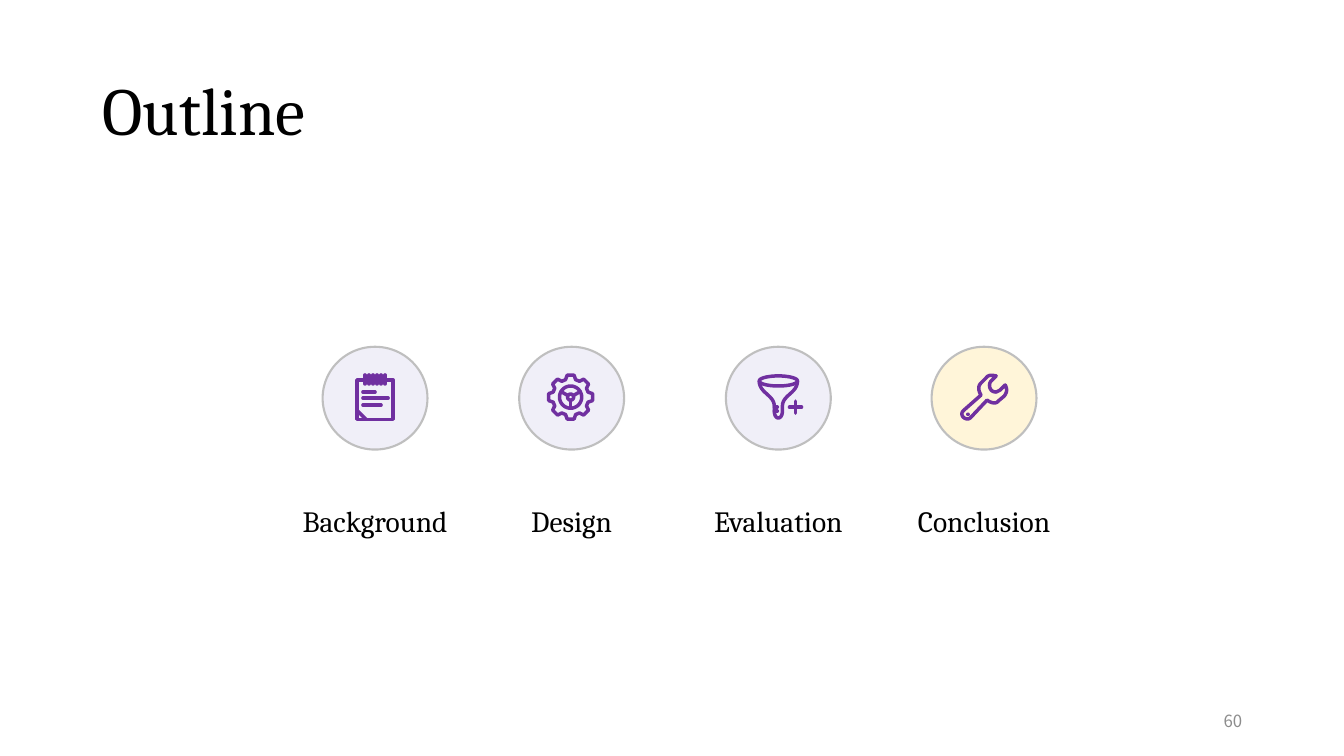
from dataclasses import dataclass, field
from math import cos, radians, sin

from lxml import etree
from pptx import Presentation
from pptx import util as u
from pptx.dml.color import RGBColor
from pptx.enum import shapes, text
from pptx.oxml import ns


@dataclass
class Theme:
    px: int = 9144
    ink: str = "000000"
    icon: str = "7030A0"
    rim: str = "BFBFBF"
    lilac: str = "9E98D5"
    amber: str = "FFC000"
    tint: int = 15
    rim_width: float = 1.5
    icon_width: float = 2.5
    title: dict = field(default_factory=lambda: {"name": "Cambria", "size": u.Pt(48)})
    label: dict = field(default_factory=lambda: {"name": "Cambria", "size": u.Pt(21)})
    number: dict = field(default_factory=lambda: {"name": "Noto Sans CJK SC", "size": u.Pt(12)})
    muted: str = "8C8C8C"


def bezier(start, controls):
    points = [start, *zip(controls[::2], controls[1::2])]
    for step in range(1, 13):
        t = step / 12
        weights = ((1 - t) ** 3, 3 * t * (1 - t) ** 2, 3 * t * t * (1 - t), t ** 3)
        yield tuple(sum(w * p[axis] for w, p in zip(weights, points)) for axis in (0, 1))


def trace(start, *steps):
    points = [start]
    for step in steps:
        points += [step] if len(step) == 2 else bezier(points[-1], step)
    return points


def polar(cx, cy, radius, angle):
    return cx + radius * cos(radians(angle)), cy + radius * sin(radians(angle))


def oval(cx, cy, rx, ry):
    return [(cx + rx * cos(radians(a)), cy + ry * sin(radians(a))) for a in range(0, 361, 10)]


def notepad():
    frame = [(-18, -17), (18, -17), (18, 22), (-18, 22), (-18, -17)]
    fold = [(-18, 13), (-9, 22)]
    rings = [[(x, -22), (x, -13)] for x in range(-10, 11, 4)]
    lines = [[(-12, y), (end, y)] for y, end in ((-5, 0), (1, 13), (8, 6))]
    return [frame, fold, *rings, *lines]


def gear():
    cx, cy = -1, 0
    rim = [polar(cx, cy, radius, tooth + turn)
           for tooth in range(0, 360, 45)
           for radius, turn in ((18, -16), (22, -9), (22, 9), (18, 16))]
    spokes = [[polar(cx, cy, r, angle) for r in (3, 11)] for angle in (90, 210, 330)]
    return [rim + rim[:1], oval(cx, cy, 11, 11), oval(cx, cy, 3, 3), *spokes]


def funnel():
    body = trace((-19, -16), (-19, -4, -4, -2, -4, 9), (-4, 14),
                 (-4, 23, 4, 23, 4, 14), (4, 9), (4, -2, 19, -4, 19, -16))
    ticks = [[(-4, y), (-1, y)] for y in (10, 14)]
    plus = [[(11, 10), (23, 10)], [(17, 4), (17, 16)]]
    return [oval(0, -16, 19, 5), body, *ticks, *plus]


def wrench():
    body = trace((-20, 13), (-3, -2), (-6, -7, -6, -11, -3, -14), (2, -19),
                 (4, -22, 7, -22, 12, -21), (7, -16), (4, -13, 5, -5, 12, -5),
                 (16, -7), (21, -12), (23, -8, 23, -5, 20, -1), (14, 4),
                 (12, 7, 7, 6, 3, 3), (-13, 20), (-17, 25, -26, 18, -20, 13))
    return [body, [(-16, 17), (-16, 17.2)]]


class Board:
    def __init__(self, slide, theme):
        self.slide, self.theme = slide, theme

    def emu(self, *lengths):
        return [round(length * self.theme.px) for length in lengths]

    def words(self, wording, box, font, color, align, anchor=text.MSO_ANCHOR.TOP, spacing=1.0):
        frame = self.slide.shapes.add_textbox(*self.emu(*box)).text_frame
        for name, value in {"word_wrap": True, "vertical_anchor": anchor}.items():
            setattr(frame, name, value)
        paragraph = frame.paragraphs[0]
        paragraph.text = wording
        for name, value in {"alignment": align, "line_spacing": spacing}.items():
            setattr(paragraph, name, value)
        for name, value in font.items():
            setattr(paragraph.font, name, value)
        paragraph.font.color.rgb = RGBColor.from_string(color)

    def outline(self, shape, color, width):
        shape.shadow.inherit = False
        shape.line.color.rgb = RGBColor.from_string(color)
        shape.line.width = u.Pt(width)

    def disc(self, box, color):
        disc = self.slide.shapes.add_shape(shapes.MSO_SHAPE.OVAL, *self.emu(*box))
        disc.fill.solid()
        disc.fill.fore_color.rgb = RGBColor.from_string(color)
        tone = disc.element.spPr.find(ns.qn("a:solidFill"))[0]
        etree.SubElement(tone, ns.qn("a:alpha")).set("val", str(self.theme.tint * 1000))
        self.outline(disc, self.theme.rim, self.theme.rim_width)

    def icon(self, cx, cy, strokes):
        placed = [[self.emu(cx + x, cy + y) for x, y in stroke] for stroke in strokes]
        builder = self.slide.shapes.build_freeform(*placed[0][0])
        for index, (start, *rest) in enumerate(placed):
            if index:
                builder.move_to(*start)
            builder.add_line_segments(rest, close=False)
        icon = builder.convert_to_shape()
        icon.fill.background()
        self.outline(icon, self.theme.icon, self.theme.icon_width)
        line = icon.element.spPr.find(ns.qn("a:ln"))
        line.set("cap", "rnd")
        etree.SubElement(line, ns.qn("a:round"))


def main():
    theme = Theme()
    deck = Presentation()
    deck.slide_width, deck.slide_height = 1333 * theme.px, 750 * theme.px
    board = Board(deck.slides.add_slide(deck.slide_layouts[6]), theme)
    align, middle = text.PP_ALIGN, text.MSO_ANCHOR.MIDDLE

    board.words("Outline", (92, 40, 1150, 145), theme.title, theme.ink, align.LEFT, middle, 0.9)
    stages = [
        ("Background", 372, theme.lilac, notepad),
        ("Design", 567, theme.lilac, gear),
        ("Evaluation", 772, theme.lilac, funnel),
        ("Conclusion", 976, theme.amber, wrench),
    ]
    for stage, center, color, drawing in stages:
        board.disc((center - 52, 344, 104, 102), color)
        board.icon(center, 394, drawing())
        board.words(stage, (center - 96, 494, 192, 45), theme.label, theme.ink, align.CENTER)
    board.words("60", (942, 695, 300, 40), theme.number, theme.muted, align.RIGHT, middle)
    deck.save("out.pptx")


if __name__ == "__main__":
    main()
